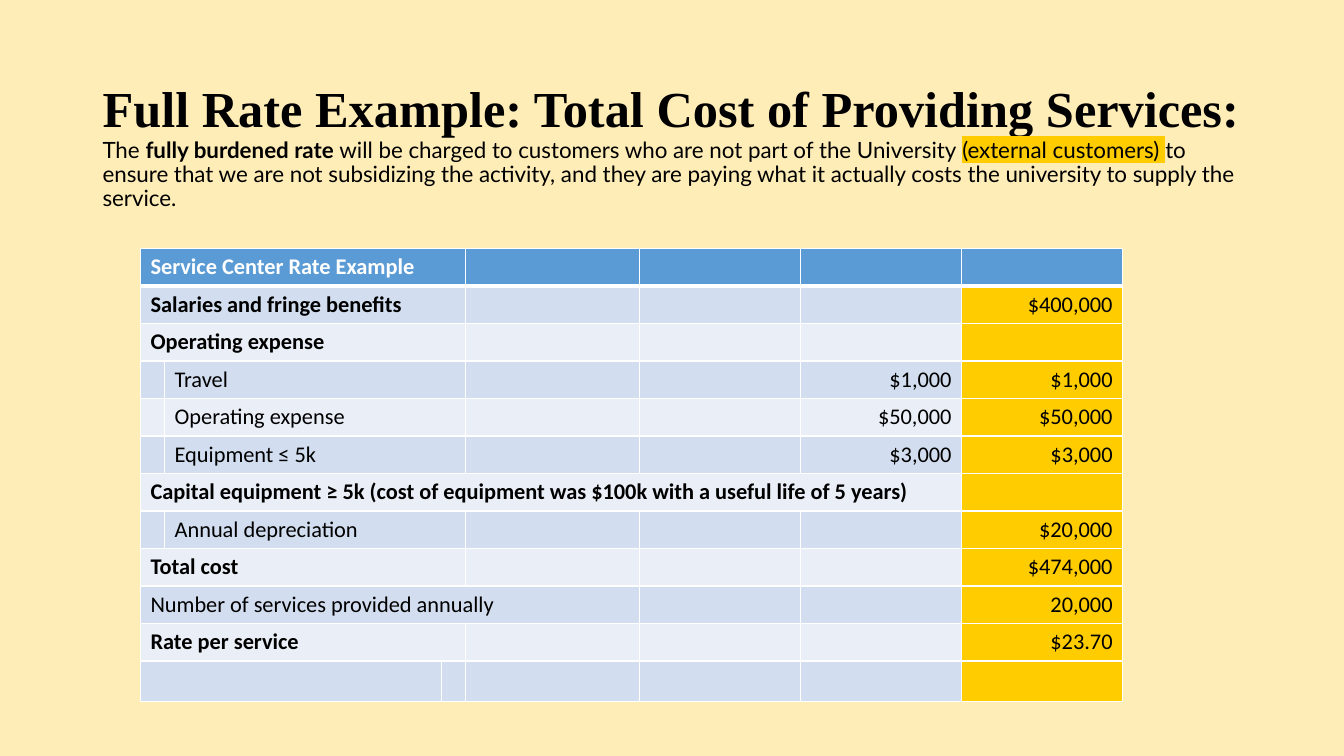
from lxml.etree import SubElement
from pptx import Presentation
from pptx.dml.color import RGBColor
from pptx.enum.text import MSO_ANCHOR as Anchor, MSO_AUTO_SIZE as AutoSize, PP_ALIGN as Align
from pptx.oxml.ns import qn
from pptx.util import Cm, Pt

COLORS = {
    "background": "FFEDB8",
    "text": "000000",
    "white": "FFFFFF",
    "header": "5B9BD5",
    "band_dark": "D2DEEF",
    "band_light": "EAEFF7",
    "accent": "FFCC00",
}

# Text, bold, highlighted
INTRO = [
    ("The ", False, False),
    ("fully burdened rate ", True, False),
    ("will be charged to customers who are not part of the University ", False, False),
    ("(external customers) ", False, True),
    ("to ensure that we are not subsidizing the activity, and they are paying "
     "what it actually costs the university to supply the service.", False, False),
]

# Label, first column, columns spanned, bold, detail amount, total amount
COST_ROWS = [
    ("Service Center Rate Example", 0, 3, True, "", ""),
    ("Salaries and fringe benefits", 0, 3, True, "", "$400,000"),
    ("Operating expense", 0, 3, True, "", ""),
    ("Travel", 1, 2, False, "$1,000", "$1,000"),
    ("Operating expense", 1, 2, False, "$50,000", "$50,000"),
    ("Equipment ≤ 5k", 1, 2, False, "$3,000", "$3,000"),
    ("Capital equipment ≥ 5k (cost of equipment was $100k with a useful life of 5 years)",
     0, 6, True, "", ""),
    ("Annual depreciation", 1, 2, False, "", "$20,000"),
    ("Total cost", 0, 3, True, "", "$474,000"),
    ("Number of services provided annually", 0, 4, False, "", "20,000"),
    ("Rate per service", 0, 3, True, "", "$23.70"),
    ("", 0, 2, False, "", ""),
]
COLUMN_WIDTHS = [0.6, 6.98, 0.6, 4.38, 4.06, 4.06, 4.06]
ROW_HEIGHT, LAST_ROW_HEIGHT = 0.94, 1.03
DETAIL, TOTAL = 5, 6


def rgb(name):
    return RGBColor.from_string(COLORS[name])


def add_span(para, text, size, font, color="text", bold=False):
    span = para.add_run()
    span.text = text
    span.font.size = Pt(size)
    span.font.name = font
    span.font.bold = bold
    span.font.color.rgb = rgb(color)
    return span


def add_solid_fill(parent, color):
    fill = SubElement(parent, qn("a:solidFill"))
    SubElement(fill, qn("a:srgbClr"), val=COLORS[color])


def highlight(span, color):
    properties = span.font._element
    mark = SubElement(properties, qn("a:highlight"))
    SubElement(mark, qn("a:srgbClr"), val=COLORS[color])
    properties.find(qn("a:solidFill")).addnext(mark)


def set_borders(cell, top, bottom):
    properties = cell._tc.get_or_add_tcPr()
    for side, width in (("L", 1), ("R", 1), ("T", top), ("B", bottom)):
        line = SubElement(properties, qn(f"a:ln{side}"), w=str(Pt(width)))
        add_solid_fill(line, "white")


def write_title(page, left, top, width, height):
    title = page.shapes.title
    title.left, title.top, title.width, title.height = left, top, width, height
    frame = title.text_frame
    frame.word_wrap = True
    frame.auto_size = AutoSize.NONE
    frame.vertical_anchor = Anchor.MIDDLE
    para = frame.paragraphs[0]
    para.alignment = Align.LEFT
    para.line_spacing = 0.9
    add_span(para, "Full Rate Example: Total Cost of Providing Services:",
             36, "Times New Roman", bold=True)
    para.add_line_break()
    SubElement(para._p.find(qn("a:br")), qn("a:rPr"), sz="3600")
    for text, bold, marked in INTRO:
        span = add_span(para, text, 16, "Lato", bold=bold)
        if marked:
            highlight(span, "accent")


def fill_color(row, column):
    if row == 0:
        return "header"
    if column == TOTAL:
        return "accent"
    return "band_dark" if row % 2 else "band_light"


def write_cell(cell, text, color, bold, align):
    para = cell.text_frame.paragraphs[0]
    para.alignment = align
    if text:
        add_span(para, text, 16, "Calibri", color, bold)
    else:
        SubElement(para._p, qn("a:endParaRPr"), sz="1600")


def draw_cost_table(page, left, top):
    row_count = len(COST_ROWS)
    frame = page.shapes.add_table(row_count, len(COLUMN_WIDTHS), left, top,
                                  Cm(sum(COLUMN_WIDTHS)), Cm(ROW_HEIGHT * row_count))
    table = frame.table
    table.horz_banding = False
    for column, width in zip(table.columns, COLUMN_WIDTHS):
        column.width = Cm(width)
    for row in table.rows:
        row.height = Cm(ROW_HEIGHT)
    table.rows[row_count - 1].height = Cm(LAST_ROW_HEIGHT)

    for r, (label, first, spanned, bold, detail, total) in enumerate(COST_ROWS):
        texts = {DETAIL: detail, TOTAL: total, first: label}
        for c in range(len(COLUMN_WIDTHS)):
            cell = table.cell(r, c)
            set_borders(cell, top=3 if r == 1 else 1, bottom=3 if r == 0 else 1)
            cell.fill.solid()
            cell.fill.fore_color.rgb = rgb(fill_color(r, c))
            write_cell(cell, texts.get(c, ""), "white" if r == 0 else "text",
                       bold and c == first, Align.RIGHT if c >= DETAIL else Align.LEFT)
        table.cell(r, first).merge(table.cell(r, first + spanned - 1))


def main():
    deck = Presentation()
    deck.slide_width, deck.slide_height = Cm(33.87), Cm(19.05)
    page = deck.slides.add_slide(deck.slide_layouts[5])
    page.background.fill.solid()
    page.background.fill.fore_color.rgb = rgb("background")
    write_title(page, Cm(2.33), Cm(1.02), Cm(29.21), Cm(5.41))
    draw_cost_table(page, Cm(3.54), Cm(6.26))
    deck.save("out.pptx")


if __name__ == "__main__":
    main()
